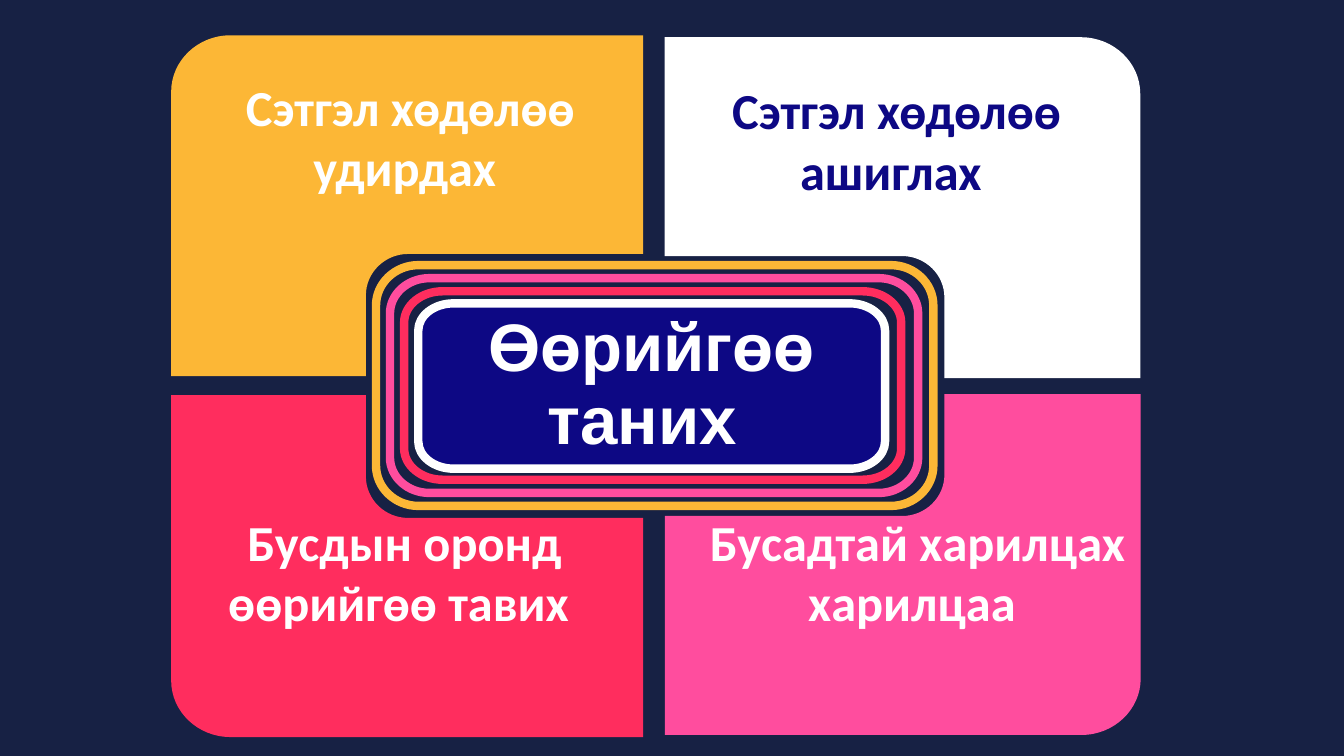
from dataclasses import dataclass

import lxml.etree
import pptx
import pptx.dml.color
import pptx.enum.text
import pptx.oxml.ns
import pptx.util

Pt = pptx.util.Pt
qn = pptx.oxml.ns.qn
Box = tuple[float, float, float, float]
BEND = 0.55


@dataclass
class Spot:
    x: float
    y: float
    turn: str = ""


@dataclass
class Panel:
    fill: str
    outer: tuple[float, float]
    inner: tuple[float, float]
    notch: tuple[float, float]
    text: str
    ink: str
    box: Box


@dataclass
class Ring:
    line: str
    box: Box
    curve: tuple[float, float]


PANELS = [
    Panel("FCB736", (122.3, 25.2), (459.4, 268.6), (261.4, 181.4),
          "Сэтгэл хөдөлөө удирдах ", "FFFFFF", (123.2, 50.7, 340, 94.3)),
    Panel("FFFFFF", (814.5, 26.6), (474.7, 270), (674.6, 182.9),
          "Сэтгэл хөдөлөө ашиглах ", "0D0884", (470.5, 53.3, 340, 94.3)),
    Panel("FF2D5E", (122.3, 526.5), (459.4, 282.2), (261.4, 370),
          "Бусдын оронд өөрийгөө тавих ", "FFFFFF", (118.9, 361.4, 340, 94.3)),
    Panel("FF4D9E", (814.8, 525), (475, 281.5), (674.6, 368.6),
          "Бусадтай харилцах харилцаа ", "FFFFFF", (480.5, 361.4, 350, 94.3)),
]

CORE = Ring("FFFFFF", (298.8, 216.7, 632.2, 334.8), (25.2, 19.4))
RINGS = [
    Ring("FCB736", (268.6, 189.4, 666.7, 361.4), (30.2, 28.8)),
    Ring("FF4D9E", (278.6, 198.7, 655.9, 352.1), (28.1, 25.2)),
    Ring("FF2D5E", (288.7, 208.1, 643.7, 342.7), (27.4, 22.3)),
]


def color(code: str) -> pptx.dml.color.RGBColor:
    return pptx.dml.color.RGBColor.from_string(code)


def place(node) -> tuple[int, int]:
    point = node.find(qn("a:pt"))
    return int(point.get("x")), int(point.get("y"))


def bend(start, node, turn: str) -> None:
    (ax, ay), (bx, by) = place(start), place(node)
    cx, cy = (bx, ay) if turn == "across" else (ax, by)
    curve = lxml.etree.Element(qn("a:cubicBezTo"))
    for x, y in ((ax, ay), (bx, by)):
        lxml.etree.SubElement(curve, qn("a:pt"),
                              x=str(round(x + BEND * (cx - x))),
                              y=str(round(y + BEND * (cy - y))))
    curve.append(node.find(qn("a:pt")))
    node.getparent().replace(node, curve)


def outline(slide, spots: list[Spot]):
    points = [(Pt(spot.x), Pt(spot.y)) for spot in spots]
    pen = slide.shapes.build_freeform(*points[0])
    pen.add_line_segments(points[1:], close=True)
    shape = pen.convert_to_shape()
    shape.shadow.inherit = False
    first = next(shape.element.iter(qn("a:moveTo")))
    nodes = [first, *shape.element.iter(qn("a:lnTo"))]
    for start, node, spot in zip(nodes, nodes[1:], spots[1:]):
        if spot.turn:
            bend(start, node, spot.turn)
    return shape


def write(para, text: str, font: str, size: float, ink: str) -> None:
    para.text = text
    para.alignment = pptx.enum.text.PP_ALIGN.CENTER
    for run in para.runs:
        run.font.name = font
        run.font.size = Pt(size)
        run.font.bold = True
        run.font.color.rgb = color(ink)


def draw_panel(slide, panel: Panel) -> None:
    (ox, oy), (ix, iy), (nx, ny) = panel.outer, panel.inner, panel.notch
    sx, sy = (1 if ix > ox else -1), (1 if iy > oy else -1)
    shape = outline(slide, [
        Spot(ix, oy), Spot(ox + sx * 42.3, oy),
        Spot(ox, oy + sy * 40.3, "across"),
        Spot(ox, iy), Spot(nx, iy), Spot(nx, ny + sy * 29.5),
        Spot(nx + sx * 30.2, ny, "down"), Spot(ix, ny),
    ])
    shape.fill.solid()
    shape.fill.fore_color.rgb = color(panel.fill)
    shape.line.fill.background()

    frame = slide.shapes.add_textbox(*map(Pt, panel.box)).text_frame
    frame.word_wrap = True
    frame.auto_size = pptx.enum.text.MSO_AUTO_SIZE.SHAPE_TO_FIT_TEXT
    write(frame.paragraphs[0], panel.text, "Calibri", 36, panel.ink)


def draw_ring(slide, ring: Ring):
    left, top, right, base = ring.box
    dx, dy = ring.curve
    shape = outline(slide, [
        Spot(left, top + dy), Spot(left + dx, top, "down"),
        Spot(right - dx, top), Spot(right, top + dy, "across"),
        Spot(right, base - dy), Spot(right - dx, base, "down"),
        Spot(left + dx, base), Spot(left, base - dy, "across"),
    ])
    shape.fill.background()
    shape.line.color.rgb = color(ring.line)
    shape.line.width = Pt(6)
    return shape


def draw_core(slide) -> None:
    shape = draw_ring(slide, CORE)
    shape.fill.solid()
    shape.fill.fore_color.rgb = color("0D0884")
    frame = shape.text_frame
    frame.word_wrap = True
    frame.vertical_anchor = pptx.enum.text.MSO_ANCHOR.MIDDLE
    frame.margin_left = frame.margin_right = Pt(22.3)
    frame.margin_top = frame.margin_bottom = Pt(22.3)
    para = frame.paragraphs[0]
    write(para, "Өөрийгөө таних ", "Arial", 48, "FFFFFF")
    para.line_spacing = 0.9


def main() -> None:
    deck = pptx.Presentation()
    deck.slide_width, deck.slide_height = Pt(960), Pt(540)
    slide = deck.slides.add_slide(deck.slide_layouts[6])
    slide.background.fill.solid()
    slide.background.fill.fore_color.rgb = color("172144")
    for panel in PANELS:
        draw_panel(slide, panel)
    draw_core(slide)
    for ring in RINGS:
        draw_ring(slide, ring)
    deck.save("out.pptx")


if __name__ == "__main__":
    main()
